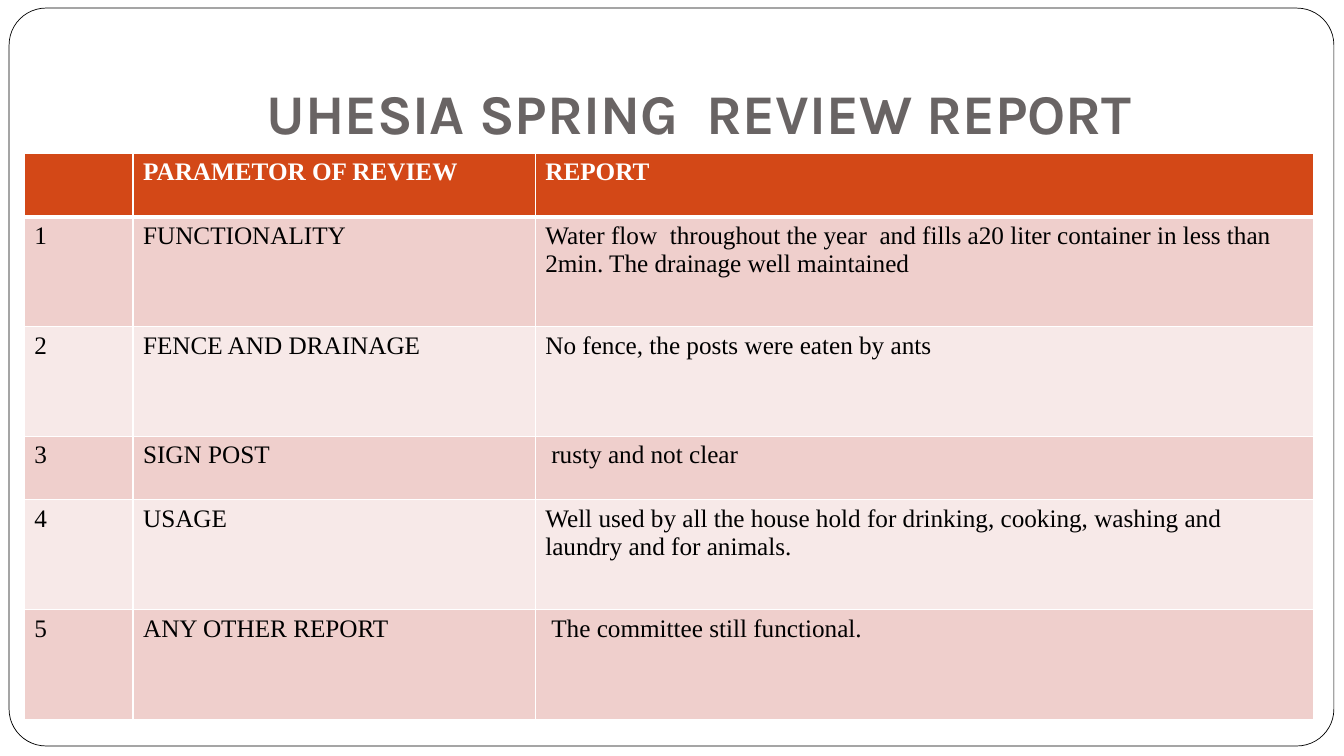
from dataclasses import dataclass

from lxml import etree
from pptx import Presentation
from pptx.dml.color import RGBColor
from pptx.enum.shapes import MSO_SHAPE
from pptx.enum.text import MSO_ANCHOR, PP_ALIGN
from pptx.oxml.ns import qn
from pptx.util import Emu, Inches, Pt

ROUND = MSO_SHAPE.ROUNDED_RECTANGLE
BOTTOM = MSO_ANCHOR.BOTTOM
CENTER = PP_ALIGN.CENTER

WIDTH, HEIGHT = Inches(13.33), Inches(7.5)
WHITE, BLACK, GREY = "FFFFFF", "000000", "696464"
HEAD = "D34817"
BANDS = ("EFCFCC", "F7E9E8")
COLS = (8.1, 29.93, 57.9)  # percent of slide width
SHORT, TALL = 8.4, 14.53  # percent of slide height


@dataclass
class Row:
    texts: tuple[str, str, str]
    size: float
    lead: float = 0  # extra inches before the report text


ROWS = (
    Row(("", "PARAMETOR OF REVIEW", "REPORT"), SHORT),
    Row(("1", "FUNCTIONALITY",
         "Water flow  throughout the year  and fills a20 liter container "
         "in less than 2min. The drainage well maintained"), TALL),
    Row(("2", "FENCE AND DRAINAGE", "No fence, the posts were eaten by ants"), TALL),
    Row(("3", "SIGN POST", "rusty and not clear"), SHORT, 0.06),
    Row(("4", "USAGE",
         "Well used by all the house hold for drinking, cooking, washing "
         "and laundry and for animals."), TALL),
    Row(("5", "ANY OTHER REPORT", "The committee still functional."), TALL, 0.06),
)


def across(share: float) -> Emu:
    """Turn a percentage of the slide width into a length."""
    return Emu(round(WIDTH * share / 100))


def down(share: float) -> Emu:
    """Turn a percentage of the slide height into a length."""
    return Emu(round(HEIGHT * share / 100))


def place(left: float, top: float, wide: float, high: float) -> tuple:
    return across(left), down(top), across(wide), down(high)


def paint(fill, shade: str) -> None:
    fill.solid()
    fill.fore_color.rgb = RGBColor.from_string(shade)


def add_run(para, text: str, face: str, size: float, shade: str, bold: bool) -> None:
    run = para.add_run()
    run.text = text
    font = run.font
    font.name, font.size, font.bold = face, Pt(size), bold
    font.color.rgb = RGBColor.from_string(shade)


def edge(cell, side: str, points: float) -> None:
    """Add one white border line to a cell; call before its fill is set."""
    line = etree.SubElement(cell._tc.get_or_add_tcPr(), qn(f"a:ln{side}"),
                            w=str(Pt(points)))
    solid = etree.SubElement(line, qn("a:solidFill"))
    etree.SubElement(solid, qn("a:srgbClr"), val=WHITE)


def draw_frame(slide) -> None:
    frame = slide.shapes.add_shape(ROUND, *place(0.68, 1.07, 98.57, 97.6))
    frame.adjustments[0] = 0.05
    frame.shadow.inherit = False
    paint(frame.fill, WHITE)
    paint(frame.line.fill, BLACK)
    frame.line.width = Pt(0.5)


def draw_title(slide) -> None:
    box = slide.shapes.add_textbox(*place(10, 4, 85, 16.67)).text_frame
    box.word_wrap = True
    box.vertical_anchor = BOTTOM
    box.margin_bottom = Inches(0.1)
    box.margin_right = Inches(0.23)
    para = box.paragraphs[0]
    para.alignment = CENTER
    add_run(para, "UHESIA SPRING  REVIEW REPORT", "Karla", 40, GREY, True)


def draw_table(slide) -> None:
    high = sum(row.size for row in ROWS)
    table = slide.shapes.add_table(len(ROWS), len(COLS),
                                   *place(1.8, 20.27, sum(COLS), high)).table
    table.first_row = table.horz_banding = False
    for col, share in zip(table.columns, COLS):
        col.width = across(share)
    for i, row in enumerate(ROWS):
        table.rows[i].height = down(row.size)
        top = i == 0
        for j, text in enumerate(row.texts):
            cell = table.cell(i, j)
            for side in "LRTB":
                thick = (side == "B" and top) or (side == "T" and i == 1)
                edge(cell, side, 3 if thick else 1)
            paint(cell.fill, HEAD if top else BANDS[(i - 1) % 2])
            if text:
                add_run(cell.text_frame.paragraphs[0], text, "Times New Roman",
                        18, WHITE if top else BLACK, top)
        cell.margin_left = Inches(0.1 + row.lead)


def main() -> None:
    deck = Presentation()
    deck.slide_width, deck.slide_height = WIDTH, HEIGHT
    slide = deck.slides.add_slide(deck.slide_layouts[6])
    paint(slide.background.fill, WHITE)
    draw_frame(slide)
    draw_title(slide)
    draw_table(slide)
    deck.save("out.pptx")


if __name__ == "__main__":
    main()
